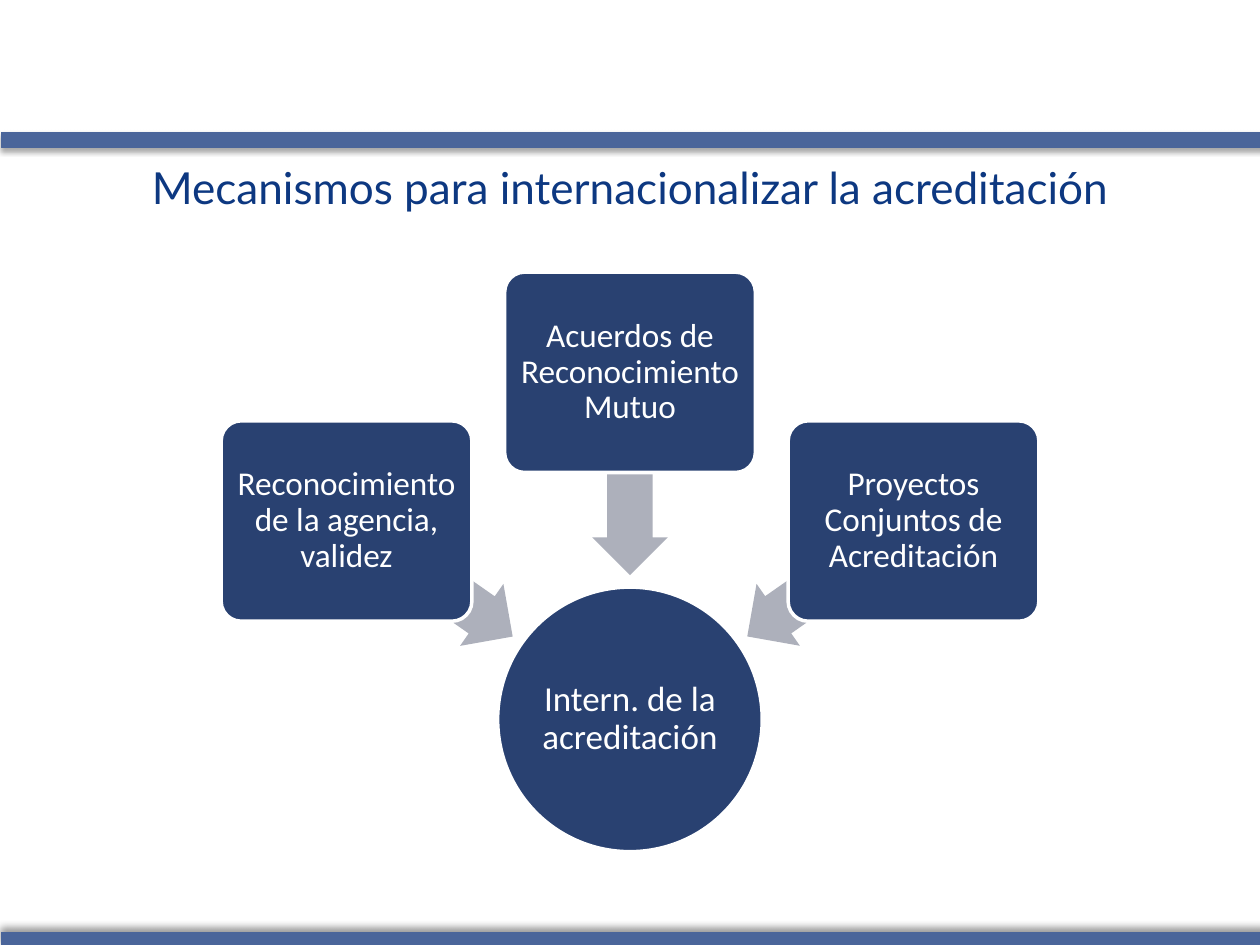
from lxml import etree
from pptx import Presentation
from pptx.dml.color import RGBColor
from pptx.enum.shapes import MSO_SHAPE
from pptx.enum.text import MSO_ANCHOR, PP_ALIGN
from pptx.oxml.ns import qn
from pptx.util import Inches, Pt

RECT, ROUND = MSO_SHAPE.RECTANGLE, MSO_SHAPE.ROUNDED_RECTANGLE
OVAL, ARROW = MSO_SHAPE.OVAL, MSO_SHAPE.LEFT_ARROW
MIDDLE, CENTER = MSO_ANCHOR.MIDDLE, PP_ALIGN.CENTER
NAVY, BAR, GREY, WHITE, TITLE = "294171", "4A659A", "ADB0BB", "FFFFFF", "0D3881"
MID_X = 5
BOXES = [
    (-1, 3.34, 4.59, "Reconocimiento de la agencia, validez"),
    (0, 2.16, 3.76, "Acuerdos de Reconocimiento Mutuo"),
    (1, 3.34, 4.59, "Proyectos Conjuntos de Acreditación"),
]


def color(value):
    """Turn a hex string into a colour."""
    return RGBColor.from_string(value)


def add_shape(slide, kind, box, fill, line=None, width=2):
    """Add a filled preset shape without a shadow."""
    s = slide.shapes.add_shape(kind, *map(Inches, box))
    s.shadow.inherit = False
    s.fill.solid()
    s.fill.fore_color.rgb = color(fill)
    if line:
        s.line.color.rgb = color(line)
        s.line.width = Pt(width)
    else:
        s.line.fill.background()
    return s


def set_text(s, text, size, font, fill, spacing, margins):
    """Write centred text with margins given as left, top, right, bottom."""
    tf = s.text_frame
    tf.word_wrap = True
    tf.vertical_anchor = MIDDLE
    for side, value in zip(("left", "top", "right", "bottom"), margins):
        setattr(tf, f"margin_{side}", Inches(value))
    p = tf.paragraphs[0]
    p.alignment = CENTER
    p.line_spacing = spacing
    r = p.add_run()
    r.text = text
    for name, value in {"size": Pt(size), "name": font}.items():
        setattr(r.font, name, value)
    r.font.color.rgb = color(fill)


def add_bar(slide, top, alpha, blur, distance, angle):
    """Add a full-width bar with a soft shadow."""
    s = add_shape(slide, RECT, (0.01, top, 10.04, 0.12), BAR, BAR, 0.75)
    effects = s._element.spPr.find(qn("a:effectLst"))
    shadow = etree.SubElement(
        effects, qn("a:outerShdw"), blurRad=str(Pt(blur)), dist=str(Pt(distance)),
        dir=str(angle * 60000), algn="ctr", rotWithShape="0")
    tint = etree.SubElement(shadow, qn("a:srgbClr"), val="000000")
    etree.SubElement(tint, qn("a:alpha"), val=str(alpha * 1000))


def add_title(slide, text):
    """Add the slide title, raised by one line within its box."""
    s = slide.shapes.add_textbox(*map(Inches, (0.5, 1.31, 9, 0.76)))
    set_text(s, text, 25.2, "Lato", TITLE, 1, (0.1, 0, 0.1, 0.42))


def add_mechanism(slide, side, top, arrow_y, text):
    """Add a box and its arrow towards the circle; side is -1, 0 or 1."""
    w, h = 1.61, 0.6
    arrow = add_shape(
        slide, ARROW, (MID_X + 1.59 * side - w / 2, arrow_y - h / 2, w, h), GREY)
    arrow.rotation = 270 + 55 * side
    arrow.adjustments[0] = 0.6
    w, h = 1.99, 1.59
    s = add_shape(
        slide, ROUND, (MID_X + 2.25 * side - w / 2, top, w, h), NAVY, WHITE)
    s.adjustments[0] = 0.1
    set_text(s, text, 19, "Calibri", WHITE, 0.9, [0.04] * 4)


def main():
    """Build and save the slide."""
    prs = Presentation()
    prs.slide_width, prs.slide_height = Inches(10), Inches(7.5)
    slide = prs.slides.add_slide(prs.slide_layouts[6])
    add_bar(slide, 1.05, 35, 3.1, 1.8, 90)
    add_bar(slide, 7.4, 40, 4, 3, 270)
    add_title(slide, "Mecanismos para internacionalizar la acreditación")
    circle = add_shape(slide, OVAL, (MID_X - 1.05, 4.66, 2.1, 2.1), NAVY, WHITE)
    set_text(circle, "Intern. de la acreditación", 20, "Calibri", WHITE, 0.9, [0.01] * 4)
    for box in BOXES:
        add_mechanism(slide, *box)
    prs.save("out.pptx")


if __name__ == "__main__":
    main()
